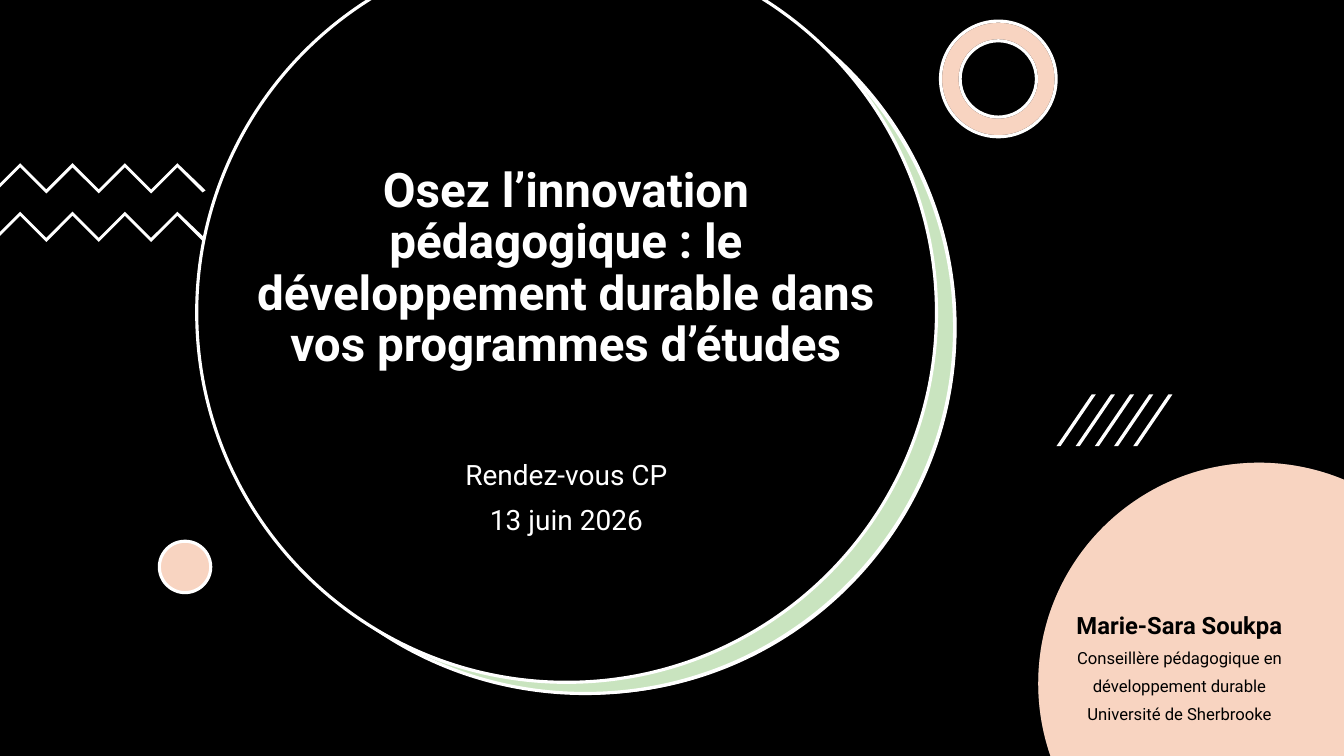
"""Build the opening slide of a talk on teaching and lasting growth."""
from dataclasses import dataclass, field
from itertools import pairwise
from math import acos, asin, cos, pi, sin, tan

from lxml.etree import SubElement as Sub
from pptx import Presentation as Deck
from pptx.dml.color import RGBColor as Rgb
from pptx.enum.shapes import MSO_SHAPE as Kind
from pptx.enum.text import MSO_ANCHOR as Anchor, PP_ALIGN as Align
from pptx.oxml.ns import qn
from pptx.shapes.autoshape import Shape
from pptx.shapes.shapetree import SlideShapes as Shapes
from pptx.util import Pt

Point = tuple[float, float]
Box = tuple[float, float, float, float]

WIDE, HIGH = 960, 540
TOP = -2.2
HUES = {"black": "000000", "white": "FFFFFF", "green": "4EA72E", "peach": "E97132"}


@dataclass
class Paint:
    fill: str
    line: str = ""
    alpha: int = 100


@dataclass
class Disc:
    x: float
    y: float
    wide: float
    high: float
    paint: Paint
    turns: list[float]
    ends: list[Point] = field(default_factory=list)


@dataclass
class Form:
    kind: Kind
    box: Box
    paint: Paint


@dataclass
class Line:
    text: str
    size: float
    bold: bool = False


@dataclass
class Block:
    box: Box
    hue: str
    space: float
    lines: list[Line]
    low: float = 0


def globe(x: float, y: float, wide: float, high: float, paint: Paint) -> Disc:
    """Return a disc cut off at the top of the slide."""
    rise = asin((y - TOP) / high)
    return Disc(x, y, wide, high, paint, [-rise, 0, pi / 2, pi, pi + rise])


def corner(x: float, y: float, size: float, paint: Paint) -> Disc:
    """Return a disc cut off at the lower right of the slide."""
    turns = [pi - asin((HIGH - y) / size), pi, 3 * pi / 2,
             2 * pi - acos((WIDE - x) / size)]
    return Disc(x, y, size, size, paint, turns, [(WIDE, HIGH)])


BLACK, WHITE = Paint("black"), Paint("white")
BLUSH = Paint("peach", alpha=30)
EDGED = Paint("peach", "white", 30)

GLOBES = [
    globe(421.2, 234, 262.1, 262.1, WHITE),
    globe(418, 234, 263.9, 261.4, Paint("green", "white", 30)),
    globe(404.7, 223.2, 264.2, 264.2, Paint("black", "white")),
]
CORNER = [corner(899.3, 488.2, 157.7, paint) for paint in (WHITE, BLUSH)]
RING = (671.8, 15.1, 82.6, 82.6)
DOT = (113.8, 386.6, 36.7, 36.7)
FORMS = [
    Form(Kind.DONUT, RING, Paint("white", "black")),
    Form(Kind.DONUT, RING, EDGED),
    Form(Kind.OVAL, DOT, WHITE),
    Form(Kind.OVAL, DOT, EDGED),
]
TITLE = Block((176.4, 70.6, 455.8, 236.9), "white", 0.9, [
    Line("Osez l’innovation pédagogique : le développement durable "
         "dans vos programmes d’études", 34, True),
], low=42)
EVENT = Block((194.4, 326.2, 420.5, 82.8), "white", 0.9, [
    Line("Rendez-vous CP", 20),
    Line("13 juin 2026", 20),
])
HOST = Block((632.2, 438.5, 420.5, 82.8), "black", 0.7, [
    Line("Marie-Sara Soukpa", 17, True),
    Line("Conseillère pédagogique en", 11.9),
    Line("développement durable", 11.9),
    Line("Université de Sherbrooke", 11.9),
])


def tint(shape: Shape, paint: Paint) -> None:
    """Set the fill, its alpha and the line of a shape."""
    shape.shadow.inherit = False
    shape.fill.solid()
    shape.fill.fore_color.rgb = Rgb.from_string(HUES[paint.fill])
    if paint.alpha < 100:
        hue = shape.fill._xPr.find(qn("a:solidFill"))[0]
        Sub(hue, qn("a:alpha"), val=str(paint.alpha * 1000))
    if paint.line:
        shape.line.color.rgb = Rgb.from_string(HUES[paint.line])
        shape.line.width = Pt(2.25)
    else:
        shape.line.fill.background()


def trace(shapes: Shapes, points: list[Point], paint: Paint) -> Shape:
    """Draw a closed outline through the points."""
    spots = [(Pt(x), Pt(y)) for x, y in points]
    pen = shapes.build_freeform(*spots[0])
    pen.add_line_segments(spots[1:], close=True)
    shape = pen.convert_to_shape()
    tint(shape, paint)
    return shape


def place(shapes: Shapes, form: Form) -> None:
    """Draw a preset shape."""
    shape = shapes.add_shape(form.kind, *map(Pt, form.box))
    if form.kind == Kind.DONUT:
        shape.adjustments[0] = 0.17
    tint(shape, form.paint)


def bend(shapes: Shapes, disc: Disc) -> None:
    """Draw a cut disc, turning each three line steps into one curve."""
    def spot(turn: float, pull: float = 0) -> Point:
        """Return a point on the rim, pulled along its tangent."""
        return (disc.x + disc.wide * (cos(turn) - pull * sin(turn)),
                disc.y + disc.high * (sin(turn) + pull * cos(turn)))

    points = [spot(disc.turns[0])]
    for start, end in pairwise(disc.turns):
        pull = 4 / 3 * tan((end - start) / 4)
        points += [spot(start, pull), spot(end, -pull), spot(end)]
    count = len(points) - 1
    shape = trace(shapes, points + disc.ends, disc.paint)
    steps = list(shape._element.iter(qn("a:lnTo")))[:count]
    for first, *rest in zip(steps[::3], steps[1::3], steps[2::3]):
        first.tag = qn("a:cubicBezTo")
        for step in rest:
            first.append(step[0])
            step.getparent().remove(step)


def zigzag(shapes: Shapes, top: float) -> None:
    """Draw a white zigzag band from the left edge."""
    step, thick = 18.72, 2.9
    peaks = [(14.4 + step * i, top + step * (i % 2)) for i in range(7)]
    under = [(x, y + thick) for x, y in reversed(peaks)]
    tip = [(146.9, top + 19.4), (144.7, top + 20.9)]
    root = [(0, top + 17.3), (0, top + 14.4)]
    trace(shapes, peaks + tip + under + root, WHITE)


def slash(shapes: Shapes, left: float) -> None:
    """Draw one slanted white bar."""
    top, base, lean, thick = 281.7, 318.7, 25.2, 2.9
    trace(shapes, [(left + thick, base), (left, base),
                   (left + lean, top), (left + lean + thick, top)], WHITE)


def write(shapes: Shapes, block: Block) -> None:
    """Add a text box with one paragraph for each line."""
    frame = shapes.add_textbox(*map(Pt, block.box)).text_frame
    frame.word_wrap = True
    if block.low:
        frame.vertical_anchor = Anchor.BOTTOM
        frame.margin_bottom = Pt(block.low)
    for i, line in enumerate(block.lines):
        para = frame.add_paragraph() if i else frame.paragraphs[0]
        para.text, para.alignment = line.text, Align.CENTER
        para.line_spacing = block.space
        if i:
            para.space_before = Pt(10)
        font = para.font
        font.name, font.size, font.bold = "Roboto", Pt(line.size), line.bold
        font.color.rgb = Rgb.from_string(HUES[block.hue])


def main() -> None:
    """Draw the slide from back to front and save it."""
    deck = Deck()
    deck.slide_width, deck.slide_height = Pt(WIDE), Pt(HIGH)
    shapes = deck.slides.add_slide(deck.slide_layouts[6]).shapes
    place(shapes, Form(Kind.RECTANGLE, (0, 0, WIDE, HIGH), BLACK))
    for top in (116.6, 151.2):
        zigzag(shapes, top)
    for disc in GLOBES:
        bend(shapes, disc)
    for block in (TITLE, EVENT):
        write(shapes, block)
    for form in FORMS:
        place(shapes, form)
    for i in range(5):
        slash(shapes, 754.6 + 13.7 * i)
    for disc in CORNER:
        bend(shapes, disc)
    write(shapes, HOST)
    deck.save("out.pptx")


if __name__ == "__main__":
    main()
